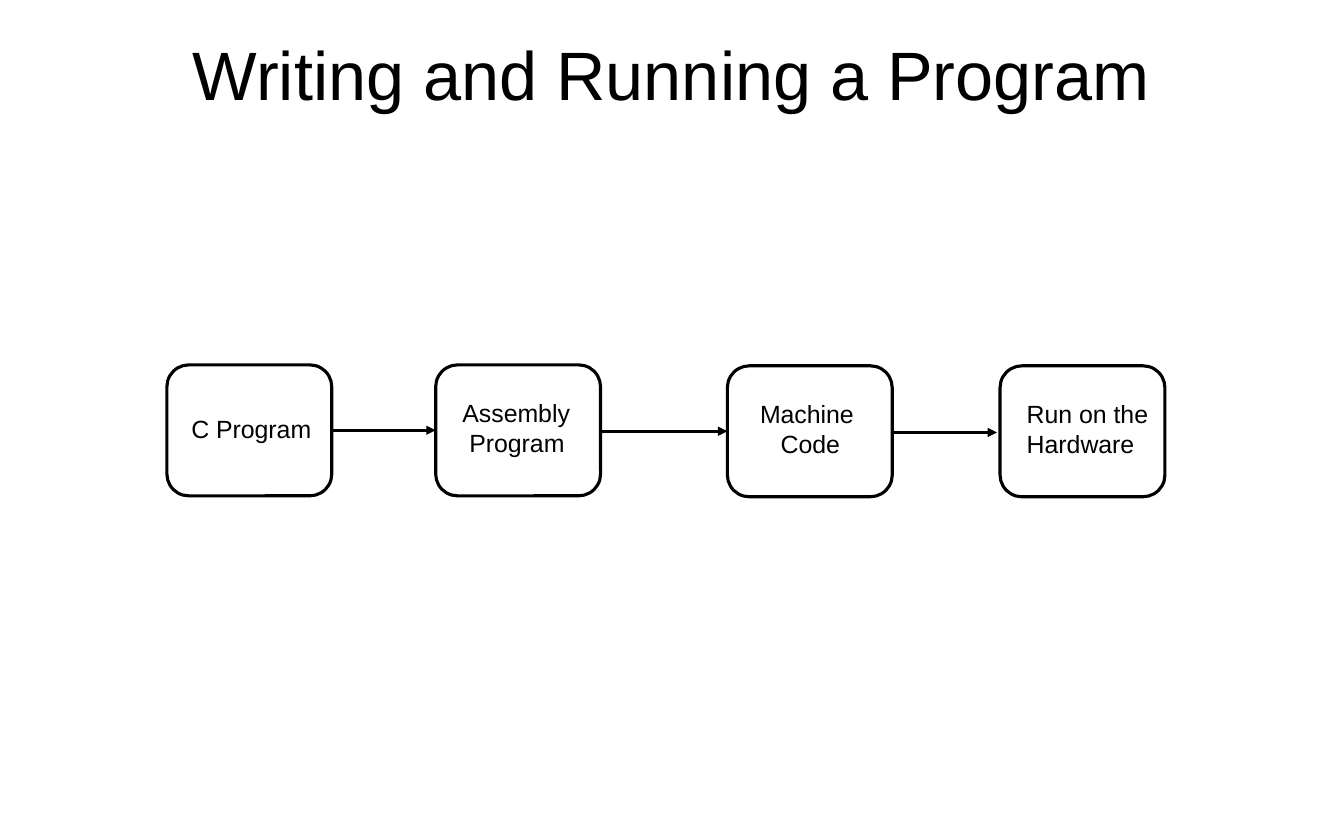
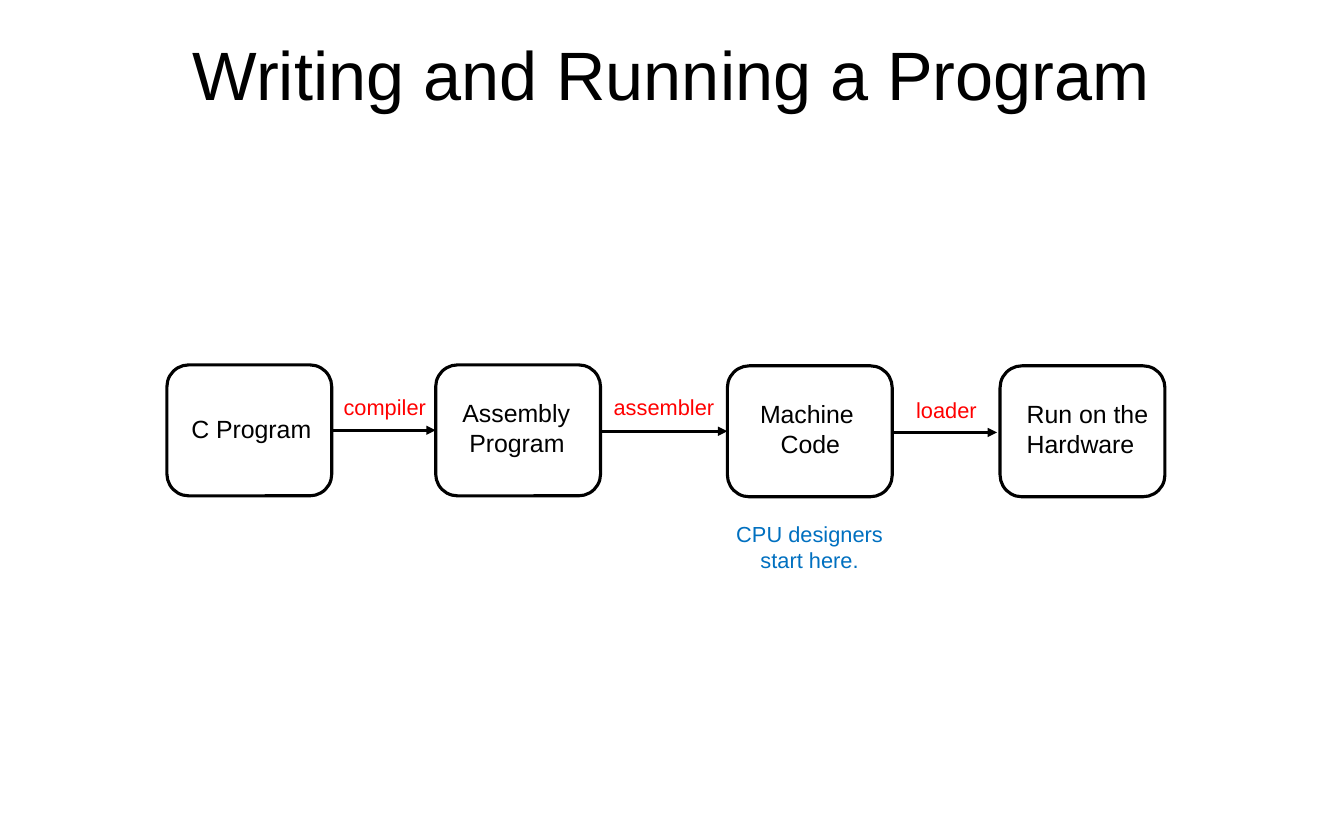
"""Build two slides on the steps from a C program to running hardware."""
from dataclasses import dataclass
from itertools import pairwise

from lxml import etree
from pptx import Presentation
from pptx import util as u
from pptx.dml.color import RGBColor
from pptx.enum import shapes, text
from pptx.oxml.ns import qn


@dataclass(frozen=True)
class Theme:
    """Colours, type sizes and line weight shared by both slides."""

    font: str = "Arial"
    ink: str = "000000"
    tool: str = "FF0000"
    remark: str = "0070C0"
    title_size: int = 44
    stage_size: int = 16
    label_size: int = 14
    line_width: int = 2


@dataclass(frozen=True)
class Stage:
    """One program stage: its words, box corner and text frame."""

    words: str
    left: float
    top: float
    text_area: tuple
    align: text.PP_ALIGN = text.PP_ALIGN.LEFT


THEME = Theme()
TITLE = "Writing and Running a Program"
BOX_WIDTH, BOX_HEIGHT = 106, 84.2
STAGES = [
    Stage("C Program", 107.3, 234.6, (115.9, 262.1, 92.9, 26.6)),
    Stage("Assembly\n Program", 280.1, 234.6, (290.2, 252, 84.2, 46.1)),
    Stage("Machine \nCode", 467.6, 235.2, (481, 252.7, 79.9, 46.1), text.PP_ALIGN.CENTER),
    Stage("Run on the\nHardware", 642.9, 235.2, (653, 252.7, 97.9, 46.1)),
]
ARROW_LEVELS = [276.6, 277.2, 278]
ARROW_GAPS = [0, 0, 2]
TOOLS = [
    ("compiler", (213.8, 249.8, 67.7, 24.5)),
    ("assembler", (387.4, 249.8, 79.2, 24.5)),
    ("loader", (581.8, 251.3, 54, 24.5)),
]
REMARK = ("CPU designers\nstart here.", (465.8, 331.2, 109.4, 41))


def points(values):
    """Convert numbers to lengths in points."""
    return [u.Pt(value) for value in values]


def add_text(slide, words, area, size, colour, align=text.PP_ALIGN.LEFT):
    """Add a text box that does not wrap and return its frame."""
    frame = slide.shapes.add_textbox(*points(area)).text_frame
    frame.text = words
    frame.word_wrap = False
    frame.auto_size = text.MSO_AUTO_SIZE.SHAPE_TO_FIT_TEXT
    for paragraph in frame.paragraphs:
        paragraph.alignment = align
        for run in paragraph.runs:
            run.font.name = THEME.font
            run.font.size = u.Pt(size)
            run.font.color.rgb = RGBColor.from_string(colour)
    return frame


def add_title(slide):
    """Add the centred slide title."""
    frame = add_text(slide, TITLE, (72, 20, 720, 54), THEME.title_size,
                     THEME.ink, text.PP_ALIGN.CENTER)
    frame.word_wrap = True
    frame.auto_size = text.MSO_AUTO_SIZE.NONE
    frame.vertical_anchor = text.MSO_ANCHOR.MIDDLE
    frame.margin_top = frame.margin_bottom = u.Pt(7.2)


def style_line(line):
    """Apply the shared line colour and weight."""
    line.color.rgb = RGBColor.from_string(THEME.ink)
    line.width = u.Pt(THEME.line_width)


def add_stage(slide, stage):
    """Add a rounded box with its stage name."""
    area = points((stage.left, stage.top, BOX_WIDTH, BOX_HEIGHT))
    box = slide.shapes.add_shape(shapes.MSO_SHAPE.ROUNDED_RECTANGLE, *area)
    box.shadow.inherit = False
    box.fill.background()
    style_line(box.line)
    add_text(slide, stage.words, stage.text_area, THEME.stage_size,
             THEME.ink, stage.align)


def add_arrow(slide, start, end, level):
    """Add a level arrow from start to end."""
    arrow = slide.shapes.add_connector(
        shapes.MSO_CONNECTOR.STRAIGHT, *points((start, level, end, level)))
    style_line(arrow.line)
    properties = arrow.element.spPr
    etree.SubElement(properties.find(qn("a:ln")), qn("a:tailEnd"), type="triangle")
    etree.SubElement(properties, qn("a:effectLst"))


def add_pipeline_slide(presentation):
    """Add a slide with the title, stages and arrows."""
    slide = presentation.slides.add_slide(presentation.slide_layouts[6])
    add_title(slide)
    for stage in STAGES:
        add_stage(slide, stage)
    for (source, target), level, gap in zip(pairwise(STAGES), ARROW_LEVELS, ARROW_GAPS):
        add_arrow(slide, source.left + BOX_WIDTH, target.left - gap, level)
    return slide


def add_annotations(slide):
    """Name the tool above each arrow and add the remark."""
    for words, area in TOOLS:
        add_text(slide, words, area, THEME.label_size, THEME.tool)
    add_text(slide, *REMARK, THEME.label_size, THEME.remark, text.PP_ALIGN.CENTER)


def main():
    """Build and save the presentation."""
    presentation = Presentation()
    presentation.slide_width, presentation.slide_height = points((864, 540))
    add_pipeline_slide(presentation)
    add_annotations(add_pipeline_slide(presentation))
    presentation.save("out.pptx")


if __name__ == "__main__":
    main()
